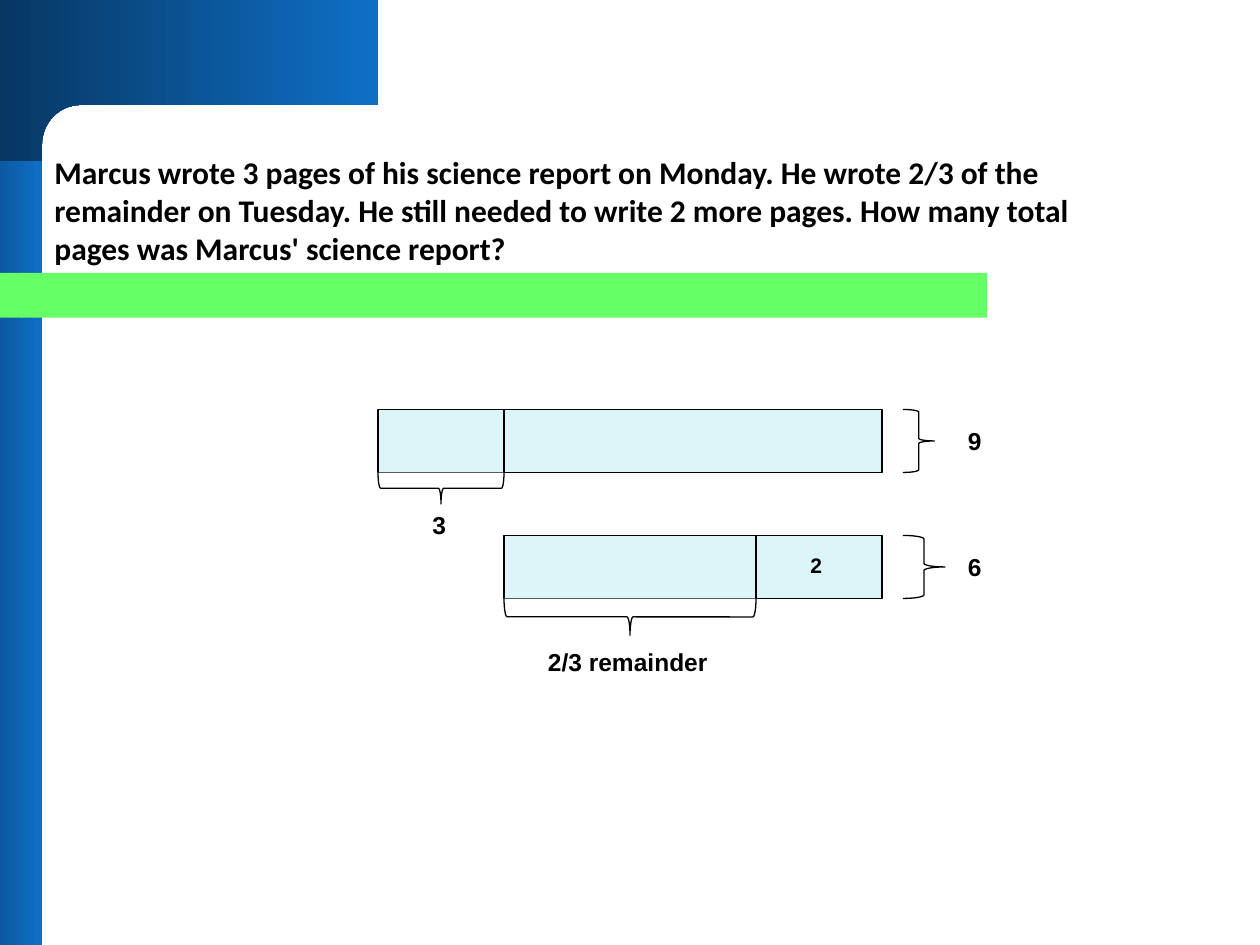
from math import cos, pi, sin

from pptx import Presentation
from pptx.dml.color import RGBColor
from pptx.enum.shapes import MSO_CONNECTOR, MSO_SHAPE
from pptx.enum.text import MSO_ANCHOR, MSO_AUTO_SIZE
from pptx.oxml.ns import qn
from pptx.util import Pt
from lxml.etree import SubElement

NAVY = RGBColor(0x07, 0x37, 0x63)
BLUE = RGBColor(0x0F, 0x6F, 0xC6)
GREEN = RGBColor(0x66, 0xFF, 0x66)
PALE = RGBColor(0xDB, 0xF5, 0xF9)
WHITE = RGBColor(0xFF, 0xFF, 0xFF)
BLACK = RGBColor(0, 0, 0)

deck = Presentation()
deck.slide_width, deck.slide_height = Pt(720), Pt(540)
slide = deck.slides.add_slide(deck.slide_layouts[6])
shapes = slide.shapes


def add_form(kind, box, fill, edge=True, turn=0):
    form = shapes.add_shape(kind, *map(Pt, box))
    form.shadow.inherit = False
    form.rotation = turn
    form.fill.solid()
    form.fill.fore_color.rgb = fill
    if edge:
        form.line.color.rgb = BLACK
        form.line.width = Pt(0.75)
    else:
        form.line.fill.background()
    return form


def add_text(words, box, size, wrap=False, font="Arial"):
    frame = shapes.add_textbox(*map(Pt, box)).text_frame
    frame.word_wrap = wrap
    frame.auto_size = MSO_AUTO_SIZE.SHAPE_TO_FIT_TEXT
    run = frame.paragraphs[0].add_run()
    run.text = words
    style = {"name": font, "size": Pt(size), "bold": True}
    for key, value in style.items():
        setattr(run.font, key, value)
    run.font.color.rgb = BLACK
    return frame


# Blue side bar and corner piece with a rounded inner edge
side = add_form(MSO_SHAPE.RECTANGLE, (-36, 0, 60, 540), BLUE, edge=False)
arc = [(46 - 22 * sin(a), 83 - 23 * cos(a))
       for a in (pi / 2 * i / 16 for i in range(17))]
points = [(216, 0), (216, 60)] + arc + [(24, 92), (0, 92), (0, 0)]
path = [(Pt(x), Pt(y)) for x, y in points]
pen = shapes.build_freeform(*path[0])
pen.add_line_segments(path[1:], close=True)
corner = pen.convert_to_shape()
corner.shadow.inherit = False
corner.line.fill.background()
for form in (side, corner):
    form.fill.gradient()
    form.fill.gradient_angle = 0
    for stop, tone in zip(form.fill.gradient_stops, (NAVY, BLUE)):
        stop.color.rgb = tone
        stop.position = 0 if tone == NAVY else 1

# Green rule with a rounded left end
rule = add_form(MSO_SHAPE.ROUNDED_RECTANGLE, (12, 156, 552, 25.5), GREEN, edge=False)
rule.adjustments[0] = 0
add_form(MSO_SHAPE.FLOWCHART_DELAY, (-18, 156, 31, 25.5), GREEN, edge=False, turn=180)

# Word problem
title = add_text(
    "Marcus wrote 3 pages of his science report on Monday. He wrote 2/3 of the "
    "remainder on Tuesday. He still needed to write 2 more pages. How many total "
    "pages was Marcus' science report?",
    (24, 83.5, 630, 72.7), 18, wrap=True, font="Calibri")
title.vertical_anchor = MSO_ANCHOR.MIDDLE

# Bars, each split by a line: left, top, width, split
for left, top, width, split in ((216, 234, 288, 288), (288, 306, 216, 432)):
    add_form(MSO_SHAPE.RECTANGLE, (left, top, width, 36), PALE)
    line = shapes.add_connector(
        MSO_CONNECTOR.STRAIGHT, Pt(split), Pt(top), Pt(split), Pt(top + 36))
    line.line.color.rgb = BLACK
    line.line.width = Pt(0.75)
    SubElement(line._element.spPr, qn("a:effectLst"))

    # Brace below the left part, turned to point down
    span, depth = split - left, 18 if top == 234 else 21
    add_form(MSO_SHAPE.RIGHT_BRACE,
             (left + (span - depth) / 2, top + 36 + (depth - span) / 2, depth, span),
             WHITE, turn=90)

# Braces for the totals
for top, width in ((234, 18), (306, 24)):
    add_form(MSO_SHAPE.RIGHT_BRACE, (516, top, width, 36), WHITE)

# Labels
for words, box, size, wrap in (
    ("3", (240, 288, 24.5, 24.2), 14, True),
    ("2", (456, 312, 21, 21.8), 12, False),
    ("2/3 remainder", (306, 366, 106.5, 24.2), 14, False),
    ("6", (546, 312, 22.3, 24.2), 14, False),
    ("9", (546, 240, 26, 24.2), 14, True),
):
    add_text(words, box, size, wrap)

deck.save("out.pptx")
